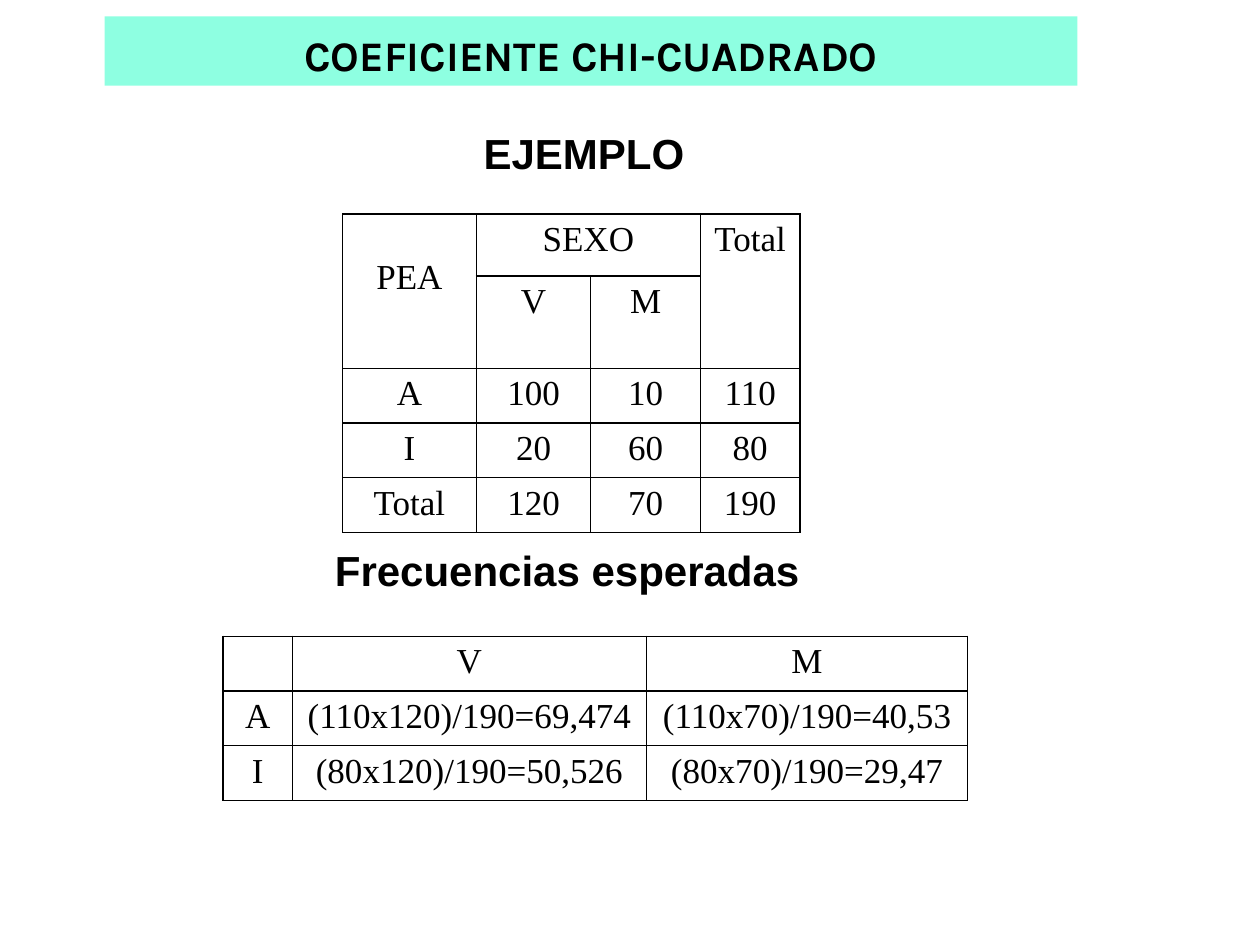
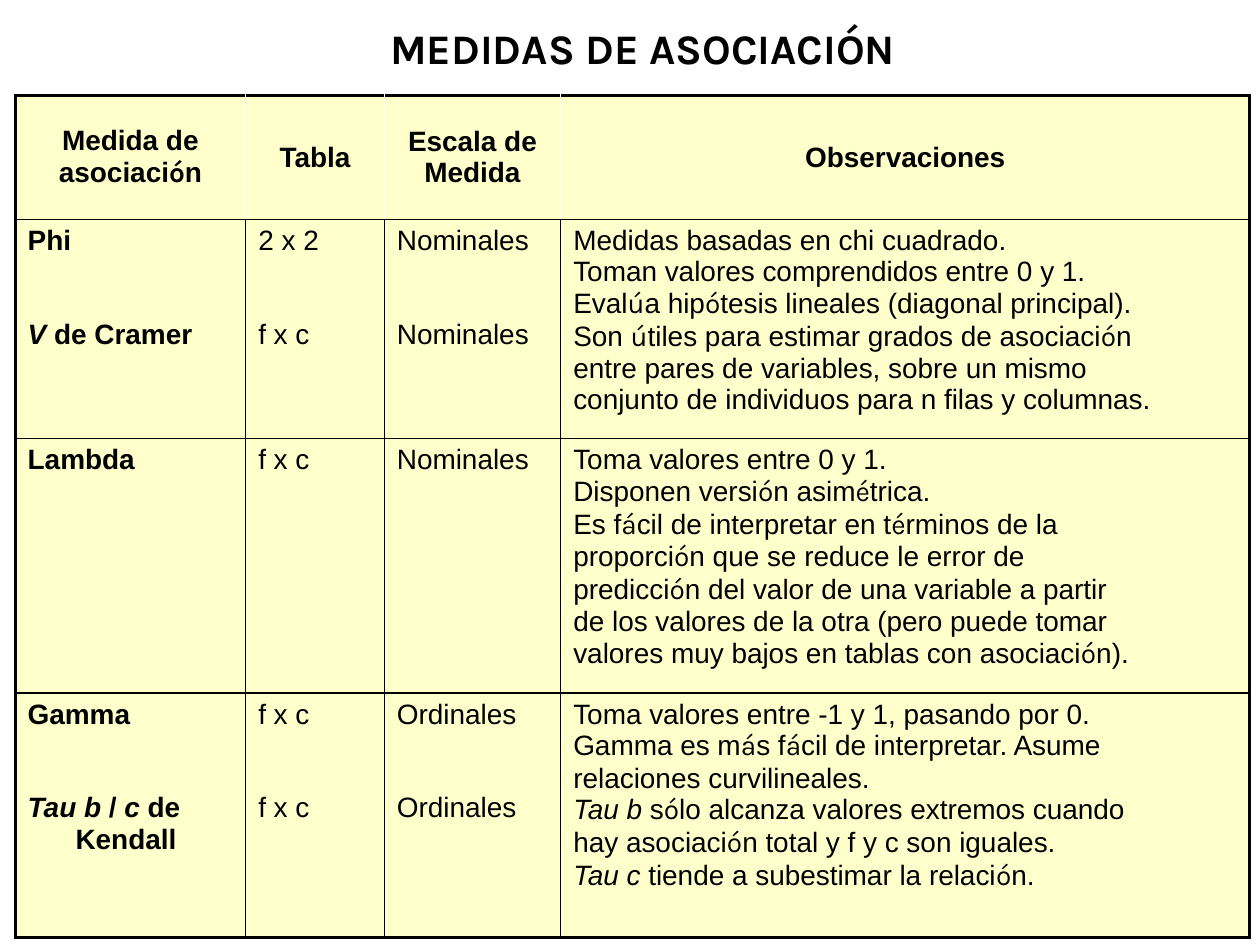
from itertools import groupby

from lxml import etree
from pptx import Presentation
from pptx.dml.color import RGBColor
from pptx.enum.shapes import MSO_SHAPE
from pptx.enum.text import MSO_ANCHOR, PP_ALIGN
from pptx.oxml.ns import qn
from pptx.util import Inches, Pt

CENTER, LEFT = PP_ALIGN.CENTER, PP_ALIGN.LEFT
TOP, MIDDLE, BOTTOM = MSO_ANCHOR.TOP, MSO_ANCHOR.MIDDLE, MSO_ANCHOR.BOTTOM
RECTANGLE = MSO_SHAPE.RECTANGLE
BLANK_LAYOUT = 6

COLORS = {"ink": "000000", "band": "8EFFE1", "cream": "FFFFCC", "white": "FFFFFF"}
TITLE_FONT, BODY_FONT, FIGURE_FONT = "Karla", "Arial", "Times New Roman"
ACCENTS = "áéóú"
TWO_LINES = 35.7

OBSERVED = [
    ["PEA", "SEXO", None, "Total"],
    [None, "V", "M", None],
    ["A", "100", "10", "110"],
    ["I", "20", "60", "80"],
    ["Total", "120", "70", "190"],
]
EXPECTED = [
    ["", "V", "M"],
    ["A", "(110x120)/190=69,474", "(110x70)/190=40,53"],
    ["I", "(80x120)/190=50,526", "(80x70)/190=29,47"],
]
MEASURES = [
    ["Medida de\nasociación", "Tabla", "Escala de\nMedida", "Observaciones"],
    ["Phi\n*V* de Cramer", "2 x 2\nf x c", "Nominales\nNominales",
     "Medidas basadas en chi cuadrado.\n"
     "Toman valores comprendidos entre 0 y 1.\n"
     "Evalúa hipótesis lineales (diagonal principal).\n"
     "Son útiles para estimar grados de asociación\n"
     "entre pares de variables, sobre un mismo\n"
     "conjunto de individuos para n filas y columnas."],
    ["Lambda", "f x c", "Nominales",
     "Toma valores entre 0 y 1.\n"
     "Disponen versión asimétrica.\n"
     "Es fácil de interpretar en términos de la\n"
     "proporción que se reduce le error de\n"
     "predicción del valor de una variable a partir\n"
     "de los valores de la otra (pero puede tomar\n"
     "valores muy bajos en tablas con asociación)."],
    ["Gamma\n*Tau b* / *c* de Kendall", "f x c\nf x c", "Ordinales\nOrdinales",
     "Toma valores entre -1 y 1, pasando por 0.\n"
     "Gamma es más fácil de interpretar. Asume\n"
     "relaciones curvilineales.\n"
     "*Tau b* sólo alcanza valores extremos cuando\n"
     "hay asociación total y f y c son iguales.\n"
     "*Tau c* tiende a subestimar la relación."],
]


def color(name):
    """Return the named colour."""
    return RGBColor.from_string(COLORS[name])


def write(frame, text, font=BODY_FONT, size=24, bold=False, align=LEFT, hanging=0, gap=0):
    """Write lines of text; asterisks enclose italics and accents use the title font."""
    for number, line in enumerate(text.split("\n")):
        paragraph = frame.add_paragraph() if number else frame.paragraphs[0]
        paragraph.alignment = align
        if number and gap:
            paragraph.space_before = Pt(gap)
        if hanging:
            properties = paragraph._p.get_or_add_pPr()
            properties.set("marL", str(Inches(hanging)))
            properties.set("indent", str(-Inches(hanging)))
        for part, words in enumerate(line.split("*")):
            for accented, letters in groupby(words, key=lambda letter: letter in ACCENTS):
                run = paragraph.add_run()
                run.text = "".join(letters)
                run.font.name = TITLE_FONT if accented else font
                run.font.size = Pt(size)
                run.font.bold = bold
                run.font.italic = part % 2 == 1
                run.font.color.rgb = color("ink")


def add_heading(slide, box, text, anchor=BOTTOM, band=None, **style):
    """Add a bold heading, on a coloured band if one is named."""
    area = [Inches(length) for length in box]
    if band:
        heading = slide.shapes.add_shape(RECTANGLE, *area)
        heading.shadow.inherit = False
        heading.fill.solid()
        heading.fill.fore_color.rgb = color(band)
        heading.line.fill.background()
    else:
        heading = slide.shapes.add_textbox(*area)
    heading.text_frame.word_wrap = True
    heading.text_frame.vertical_anchor = anchor
    write(heading.text_frame, text, bold=True, **style)


def set_borders(cell, **edges):
    """Draw the L, R, T and B edges, each given as a colour name and a width."""
    properties = cell._tc.get_or_add_tcPr()
    for side in "LRTB":
        name, width = edges[side]
        line = etree.SubElement(properties, qn(f"a:ln{side}"), w=str(Pt(width)))
        fill = etree.SubElement(line, qn("a:solidFill"))
        etree.SubElement(fill, qn("a:srgbClr"), val=COLORS[name])


def add_grid(slide, left, top, widths, heights):
    """Add a plain table with the given column widths and row heights."""
    grid = slide.shapes.add_table(
        len(heights), len(widths), Inches(left), Inches(top),
        Inches(sum(widths)), Inches(sum(heights))).table
    grid.first_row = grid.horz_banding = False
    for column, width in zip(grid.columns, widths):
        column.width = Inches(width)
    for row, height in zip(grid.rows, heights):
        row.height = Inches(height)
    return grid


def add_frequencies(slide, left, top, widths, heights, rows, rules, merges=()):
    """Add a table of frequencies whose horizontal rules have the given widths."""
    grid = add_grid(slide, left, top, widths, heights)
    for start, end in merges:
        grid.cell(*start).merge(grid.cell(*end))
    for r, row in enumerate(rows):
        for c, text in enumerate(row):
            cell = grid.cell(r, c)
            if text is None:
                continue
            last = r + cell.span_height if cell.is_merge_origin else r + 1
            set_borders(cell, L=("ink", 0.75), R=("ink", 0.75),
                        T=("ink", rules[r]), B=("ink", rules[last]))
            cell.fill.background()
            write(cell.text_frame, text, font=FIGURE_FONT, size=20, align=CENTER)
    return grid


def add_measures(slide, left, top, widths, heights, rows):
    """Add the cream table that compares the measures of association."""
    grid = add_grid(slide, left, top, widths, heights)
    rules = [2, 0.75, 1, 1, 2]
    last = len(widths) - 1
    for r, row in enumerate(rows):
        header = r == 0
        inner = ("white" if header else "ink", 1)
        for c, text in enumerate(row):
            cell = grid.cell(r, c)
            set_borders(cell, L=inner if c else ("ink", 2), R=inner if c < last else ("ink", 2),
                        T=("ink", rules[r]), B=("ink", rules[r + 1]))
            cell.fill.solid()
            cell.fill.fore_color.rgb = color("cream")
            cell.vertical_anchor = MIDDLE if header else TOP
            write(cell.text_frame, text, size=16, bold=header or c == 0,
                  align=CENTER if header else LEFT, hanging=0.38,
                  gap=0 if header or c == last else TWO_LINES)


def build_example(slide):
    """Build the chi-square example with observed and expected frequencies."""
    add_heading(slide, (0.83, 0.13, 7.72, 0.55), "COEFICIENTE CHI-CUADRADO",
                band="band", font=TITLE_FONT, align=CENTER)
    add_heading(slide, (3.74, 0.91, 1.97, 0.55), "EJEMPLO")
    observed = add_frequencies(
        slide, 2.72, 1.7, [1.06, 0.91, 0.87, 0.79], [0.49, 0.71] + [0.43] * 3, OBSERVED,
        rules=[1, 1, 1, 0.75, 0.75, 1],
        merges=[((0, 0), (1, 0)), ((0, 1), (0, 2)), ((0, 3), (1, 3))])
    observed.cell(0, 0).margin_top = Inches(0.35)
    add_heading(slide, (2.56, 4.22, 3.94, 0.55), "Frecuencias esperadas")
    add_frequencies(slide, 1.77, 5.05, [0.55, 2.81, 2.55], [0.43] * 3, EXPECTED,
                    rules=[1, 1, 0.75, 1])


def build_measures(slide):
    """Build the overview of the measures of association."""
    add_measures(slide, 0.12, 0.76, [1.83, 1.1, 1.4, 5.47], [0.98, 1.74, 2.02, 1.94], MEASURES)
    add_heading(slide, (2.44, 0.13, 5.32, 0.5), "MEDIDAS DE ASOCIACIÓN",
                anchor=TOP, font=TITLE_FONT, align=CENTER)


def main():
    """Build and save the slides."""
    deck = Presentation()
    deck.slide_width, deck.slide_height = Inches(10), Inches(7.5)
    for build in (build_example, build_measures):
        build(deck.slides.add_slide(deck.slide_layouts[BLANK_LAYOUT]))
    deck.save("out.pptx")


if __name__ == "__main__":
    main()
